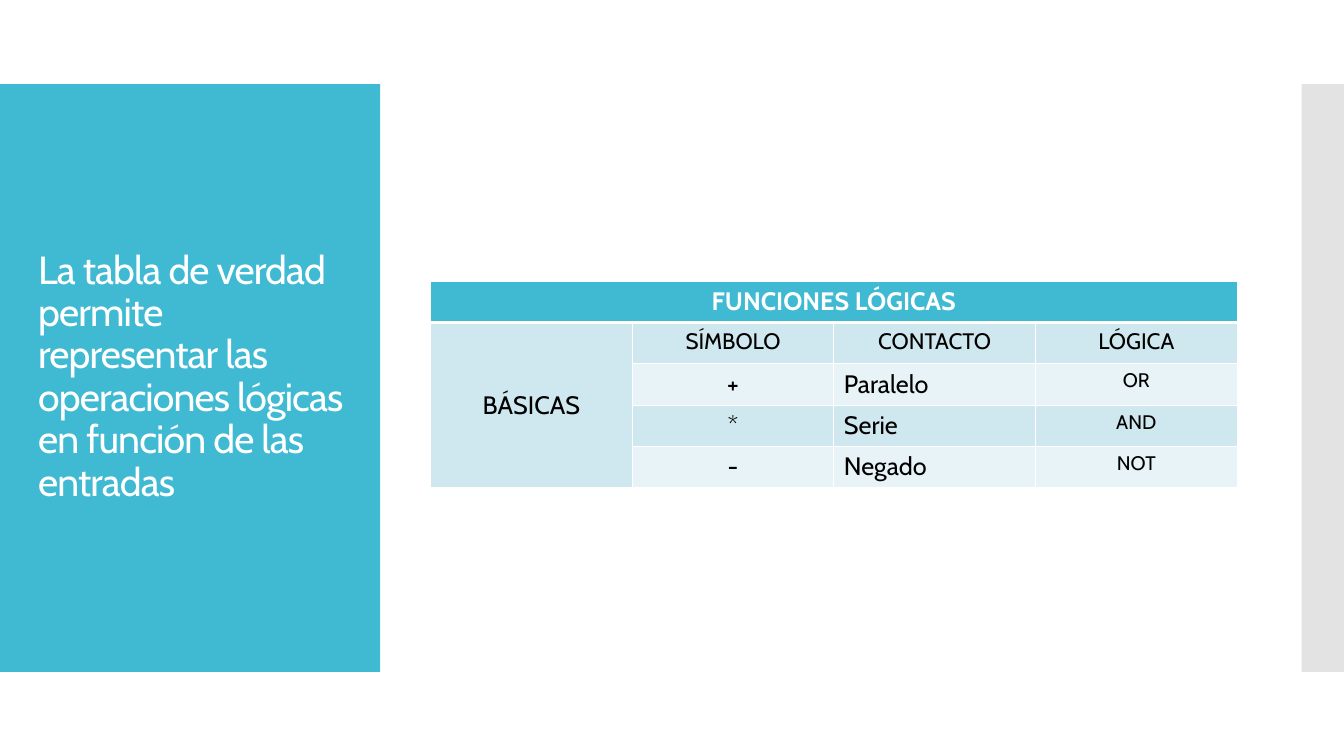
from pptx import Presentation, util as u
from pptx.dml.color import RGBColor
from pptx.enum import shapes, text
from pptx.oxml import parse_xml
from pptx.oxml.ns import nsdecls

# Content
STATEMENT = ("La tabla de verdad permite representar las operaciones lógicas "
             "en función de las entradas")
HEADING = "FUNCIONES LÓGICAS"
GROUP = "BÁSICAS"
FUNCTIONS = [
    ("SÍMBOLO", "CONTACTO", "LÓGICA"),
    ("+", "Paralelo", "OR"),
    ("*", "Serie", "AND"),
    ("-", "Negado", "NOT"),
]

# Format
FONT = "Cabin"
COLORS = {"accent": "40BAD2", "side": "E3E3E3", "dark_band": "CFE7EE",
          "light_band": "E8F3F7", "white": "FFFFFF", "black": "000000"}
LABEL_SIZE, SYMBOL_SIZE, LOGIC_SIZE = 16, 18, 14
LEFT, CENTER = text.PP_ALIGN.LEFT, text.PP_ALIGN.CENTER
TOP, MIDDLE = text.MSO_ANCHOR.TOP, text.MSO_ANCHOR.MIDDLE

# Layout in inches
WIDTH, HEIGHT = 13.33, 7.5
BAND_TOP, BAND_HEIGHT = HEIGHT / 9, HEIGHT * 7 / 9
PANEL_WIDTH, SIDE_WIDTH = 3.77, 0.42
TABLE_LEFT, TABLE_TOP = 4.27, 2.79
COLUMN, ROW = 2, 0.41


def rgb(name):
    return RGBColor.from_string(COLORS[name])


def write(frame, words, align=LEFT, **font_format):
    paragraph = frame.paragraphs[0]
    paragraph.alignment = align
    run = paragraph.add_run()
    run.text = words
    run.font.color.rgb = rgb(font_format.pop("color", "black"))
    for name, value in {"name": FONT, "bold": False, **font_format}.items():
        setattr(run.font, name, value)
    return paragraph, run


def add_band(slide, left, width, color):
    band = slide.shapes.add_shape(
        shapes.MSO_SHAPE.RECTANGLE,
        *map(u.Inches, (left, BAND_TOP, width, BAND_HEIGHT)))
    band.shadow.inherit = False
    band.fill.solid()
    band.fill.fore_color.rgb = rgb(color)
    band.line.fill.background()


def paint(cell, color, bottom=1):
    cell.fill.solid()
    cell.fill.fore_color.rgb = rgb(color)
    properties = cell._tc.get_or_add_tcPr()
    edges = {"lnL": 1, "lnR": 1, "lnT": 1, "lnB": bottom}
    for place, (edge, points) in enumerate(edges.items()):
        properties.insert(place, parse_xml(
            f'<a:{edge} {nsdecls("a")} w="{u.Pt(points)}"><a:solidFill>'
            f'<a:srgbClr val="{COLORS["white"]}"/></a:solidFill></a:{edge}>'))


def add_statement(slide):
    box = slide.shapes.add_textbox(*map(u.Inches, (0.28, 1.23, 3.22, 5.03)))
    frame = box.text_frame
    frame.word_wrap = True
    frame.vertical_anchor = MIDDLE
    paragraph, run = write(frame, STATEMENT, size=u.Pt(28), color="white")
    paragraph.line_spacing = 0.9
    run.font._element.set("spc", "-60")


def add_functions(slide):
    rows, columns = len(FUNCTIONS) + 1, len(FUNCTIONS[0]) + 1
    table = slide.shapes.add_table(
        rows, columns, *map(u.Inches, (TABLE_LEFT, TABLE_TOP,
                                       columns * COLUMN, rows * ROW))).table
    for column in table.columns:
        column.width = u.Inches(COLUMN)
    for row in table.rows:
        row.height = u.Inches(ROW)

    # Heading row and group column
    for c in range(columns):
        paint(table.cell(0, c), "accent", bottom=3)
    for r in range(1, rows):
        paint(table.cell(r, 0), "dark_band")
    heading, group = table.cell(0, 0), table.cell(1, 0)
    heading.merge(table.cell(0, columns - 1))
    group.merge(table.cell(rows - 1, 0))
    group.vertical_anchor = MIDDLE
    write(heading.text_frame, HEADING, CENTER, size=u.Pt(18), bold=True,
          color="white")
    write(group.text_frame, GROUP, CENTER, size=u.Pt(18))

    # Labels, then one function a row
    for r, function in enumerate(FUNCTIONS, 1):
        sizes = ((LABEL_SIZE,) * 3 if r == 1
                 else (SYMBOL_SIZE, SYMBOL_SIZE, LOGIC_SIZE))
        for c, (words, size) in enumerate(zip(function, sizes), 1):
            cell = table.cell(r, c)
            paint(cell, "dark_band" if r % 2 else "light_band")
            cell.vertical_anchor = TOP
            align = LEFT if r > 1 and c == 2 else CENTER
            write(cell.text_frame, words, align, size=u.Pt(size))


def main():
    deck = Presentation()
    deck.slide_width, deck.slide_height = u.Inches(WIDTH), u.Inches(HEIGHT)
    slide = deck.slides.add_slide(deck.slide_layouts[6])
    add_band(slide, 0, PANEL_WIDTH, "accent")
    add_band(slide, WIDTH - SIDE_WIDTH, SIDE_WIDTH, "side")
    add_statement(slide)
    add_functions(slide)
    deck.save("out.pptx")


if __name__ == "__main__":
    main()
